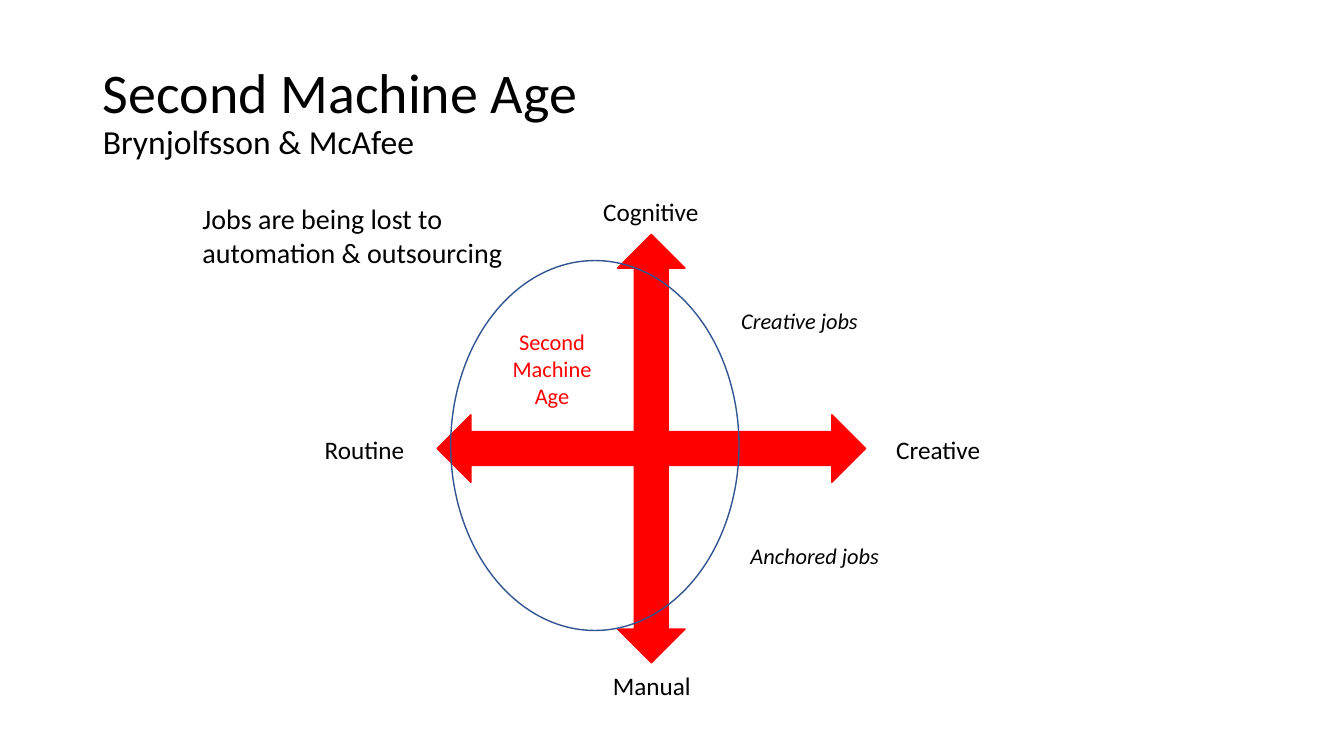
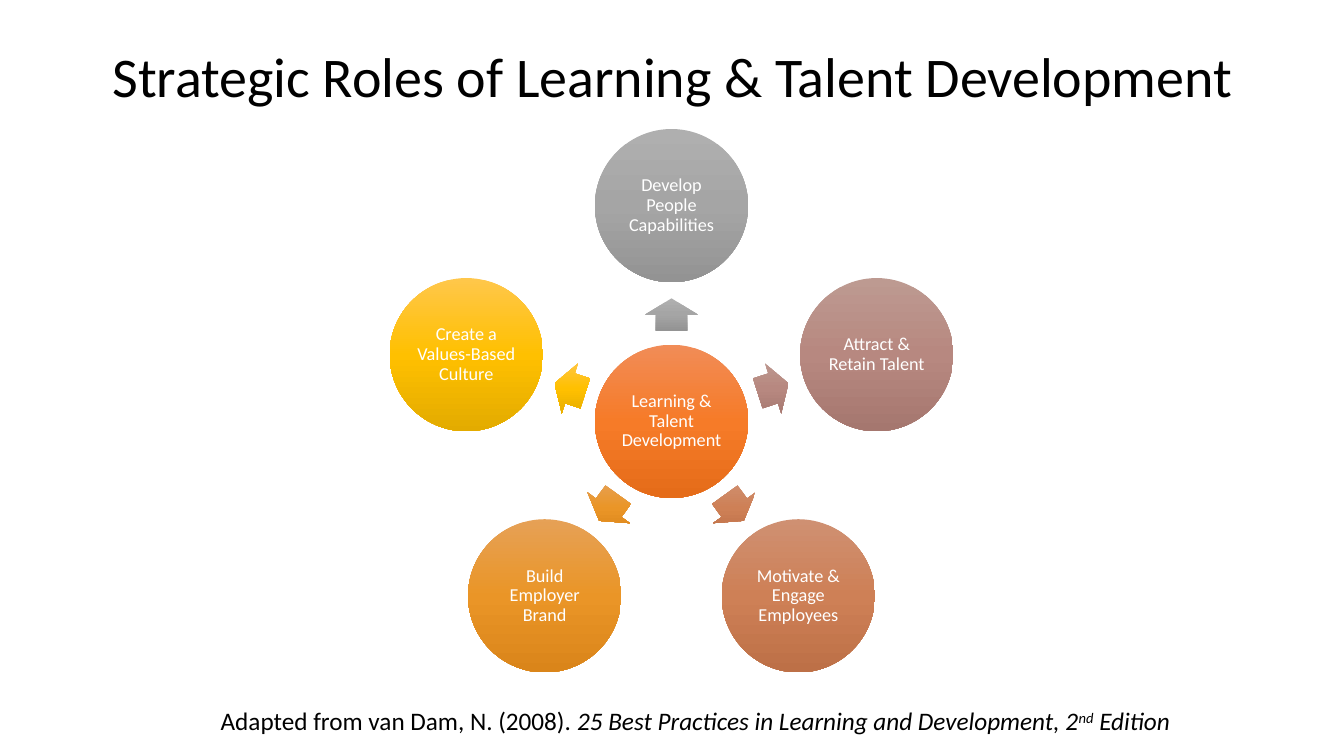
"""Build two slides: the second machine age and the strategic roles of learning."""
from dataclasses import dataclass, field
from math import cos, radians, sin

from lxml import etree
from pptx import Presentation
from pptx.dml.color import RGBColor
from pptx.enum.shapes import MSO_SHAPE
from pptx.enum.text import MSO_ANCHOR, MSO_AUTO_SIZE, PP_ALIGN
from pptx.oxml.ns import qn
from pptx.util import Inches, Pt

FONT = "Calibri"
COLORS = {"text": "000000", "light": "FFFFFF", "accent": "FF0000", "outline": "325491"}
GRADIENTS = {
    "orange": ("F18C57", "F67B28", "E56C19"),
    "gray": ("AFAFAF", "A5A5A5", "939393"),
    "rose": ("BD9A91", "B78880", "A5776F"),
    "copper": ("CF9072", "CE8056", "BD7047"),
    "amber": ("E6A156", "EA9527", "DA851A"),
    "gold": ("FFC74B", "FFC000", "E3AB00"),
}
LEFT, CENTER = PP_ALIGN.LEFT, PP_ALIGN.CENTER
MIDDLE = MSO_ANCHOR.MIDDLE
GROW, FIXED = MSO_AUTO_SIZE.SHAPE_TO_FIT_TEXT, MSO_AUTO_SIZE.NONE
ELLIPSE, DOUBLE_ARROW, ARROW = MSO_SHAPE.OVAL, MSO_SHAPE.UP_DOWN_ARROW, MSO_SHAPE.RIGHT_ARROW
TITLE_ONLY = 5

AXIS_CENTER = (6.46, 4.45)
AXIS_SIZE = (0.67, 4.25)
HUB = (6.66, 4.18)
CIRCLE_SIZE = (1.52, 1.52)
ARROW_SIZE = (0.32, 0.52)
CIRCLE_RADIUS, ARROW_RADIUS = 2.14, 1.06


@dataclass
class Span:
    text: str
    size: int = 18
    color: str = "text"
    italic: bool = False
    baseline: int = 0


@dataclass
class Label:
    place: tuple[float, float, float, float]
    spans: list[Span] = field(default_factory=list)
    align: PP_ALIGN = CENTER


@dataclass
class Role:
    text: str
    gradient: str


LABELS = [
    Label((5.8, 6.6, 1.33, 0.4), [Span("Manual")]),
    Label((5.79, 1.9, 1.33, 0.4), [Span("Cognitive")]),
    Label((2.95, 4.26, 1.33, 0.4), [Span("Routine")]),
    Label((8.64, 4.26, 1.33, 0.4), [Span("Creative")]),
    Label((7.18, 3, 1.5, 0.37), [Span("Creative jobs", 16, italic=True)]),
    Label((7.33, 5.33, 1.5, 0.37), [Span("Anchored jobs", 16, italic=True)]),
    Label((4.83, 3.21, 1.29, 0.91), [Span("Second Machine Age", 16, "accent")]),
    Label((1.91, 1.95, 3.42, 0.77),
          [Span("Jobs are being lost to automation & outsourcing", 20)], LEFT),
]
SOURCE = Label((2.09, 6.95, 10.32, 0.4), [
    Span("Adapted from van Dam, N. (2008). "),
    Span("25 Best Practices in Learning and Development, 2", italic=True),
    Span("nd", italic=True, baseline=30),
    Span(" Edition", italic=True),
], LEFT)
CORE = Role("Learning & Talent Development", "orange")
ROLES = [
    Role("Develop People Capabilities", "gray"),
    Role("Attract & Retain Talent", "rose"),
    Role("Motivate & Engage Employees", "copper"),
    Role("Build Employer Brand", "amber"),
    Role("Create a Values-Based Culture", "gold"),
]


def rgb(name: str) -> RGBColor:
    return RGBColor.from_string(COLORS[name])


def set_all(target, values: dict) -> None:
    for name, value in values.items():
        setattr(target, name, value)


def write(para, spans: list[Span], align: PP_ALIGN, spacing: float = 1.0) -> None:
    set_all(para, {"alignment": align, "line_spacing": spacing})
    for span in spans:
        run = para.add_run()
        run.text = span.text
        set_all(run.font, {"name": FONT, "size": Pt(span.size), "italic": span.italic})
        run.font.color.rgb = rgb(span.color)
        if span.baseline:
            run._r.get_or_add_rPr().set("baseline", str(span.baseline * 1000))


def add_page(deck, top: float, lines: list[Span], align: PP_ALIGN):
    page = deck.slides.add_slide(deck.slide_layouts[TITLE_ONLY])
    title = page.shapes.title
    set_all(title, {"left": Inches(0.92), "top": Inches(top),
                    "width": Inches(11.5), "height": Inches(1.45)})
    frame = title.text_frame
    set_all(frame, {"word_wrap": True, "auto_size": FIXED, "vertical_anchor": MIDDLE})
    for index, line in enumerate(lines):
        para = frame.add_paragraph() if index else frame.paragraphs[0]
        write(para, [line], align, 0.9)
    return page


def add_label(page, label: Label) -> None:
    box = page.shapes.add_textbox(*map(Inches, label.place))
    set_all(box.text_frame, {"word_wrap": True, "auto_size": GROW})
    write(box.text_frame.paragraphs[0], label.spans, label.align)


def add_centered(shapes, kind: MSO_SHAPE, center: tuple[float, float],
                 size: tuple[float, float], rotation: float = 0):
    left, top = (middle - length / 2 for middle, length in zip(center, size))
    shape = shapes.add_shape(kind, Inches(left), Inches(top), *map(Inches, size))
    shape.shadow.inherit = False
    shape.rotation = rotation
    return shape


def fill_gradient(shape, name: str) -> None:
    gradient = etree.Element(qn("a:gradFill"), rotWithShape="0")
    stops = etree.SubElement(gradient, qn("a:gsLst"))
    for index, color in enumerate(GRADIENTS[name]):
        stop = etree.SubElement(stops, qn("a:gs"), pos=str(index * 50000))
        etree.SubElement(stop, qn("a:srgbClr"), val=color)
    etree.SubElement(gradient, qn("a:lin"), ang="5400000", scaled="0")
    shape.line.fill.background()
    shape._element.spPr.find(qn("a:prstGeom")).addnext(gradient)


def around_hub(radius: float, angle: float) -> tuple[float, float]:
    turn = radians(angle)
    return HUB[0] + radius * cos(turn), HUB[1] + radius * sin(turn)


def add_circle(shapes, role: Role, center: tuple[float, float]) -> None:
    circle = add_centered(shapes, ELLIPSE, center, CIRCLE_SIZE)
    fill_gradient(circle, role.gradient)
    frame = circle.text_frame
    set_all(frame, {"word_wrap": True, "vertical_anchor": MIDDLE})
    set_all(frame, dict.fromkeys(
        ("margin_left", "margin_top", "margin_right", "margin_bottom"), Inches(0.02)))
    write(frame.paragraphs[0], [Span(role.text, 13, "light")], CENTER, 0.9)


def build_machine_age(deck) -> None:
    lines = [Span("Second Machine Age", 40), Span("Brynjolfsson & McAfee", 24)]
    page = add_page(deck, 0.4, lines, LEFT)
    axes = page.shapes.add_group_shape().shapes
    for rotation in (0, 270):
        axis = add_centered(axes, DOUBLE_ARROW, AXIS_CENTER, AXIS_SIZE, rotation)
        axis.fill.solid()
        axis.fill.fore_color.rgb = axis.line.color.rgb = rgb("accent")
        axis.line.width = Pt(1)
    ring = add_centered(page.shapes, ELLIPSE, (5.9, 4.42), (2.86, 3.67))
    ring.fill.background()
    ring.line.color.rgb = rgb("outline")
    ring.line.width = Pt(1)
    for label in LABELS:
        add_label(page, label)


def build_roles(deck) -> None:
    title = Span("Strategic Roles of Learning & Talent Development", 40)
    page = add_page(deck, 0.06, [title], CENTER)
    wheel = page.shapes.add_group_shape().shapes
    add_circle(wheel, CORE, HUB)
    for index, role in enumerate(ROLES):
        angle = (270 + index * 360 / len(ROLES)) % 360
        arrow = add_centered(wheel, ARROW, around_hub(ARROW_RADIUS, angle), ARROW_SIZE, angle)
        arrow.adjustments[0] = 0.6
        arrow.adjustments[1] = 0.5
        fill_gradient(arrow, role.gradient)
        add_circle(wheel, role, around_hub(CIRCLE_RADIUS, angle))
    add_label(page, SOURCE)


def main() -> None:
    deck = Presentation()
    set_all(deck, {"slide_width": Inches(13.33), "slide_height": Inches(7.5)})
    build_machine_age(deck)
    build_roles(deck)
    deck.save("out.pptx")


if __name__ == "__main__":
    main()
